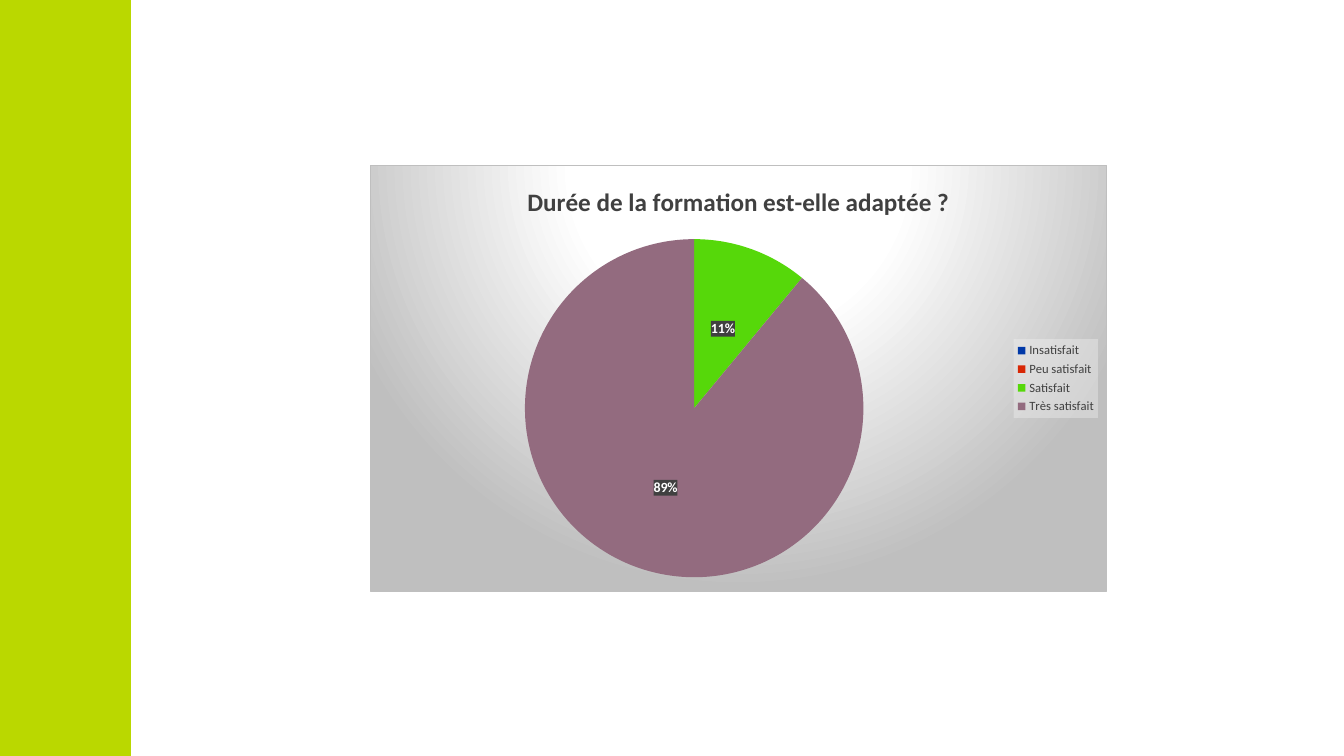
"""Build a survey slide: one pie chart on training length beside a green band."""
from pptx import Presentation
from pptx.chart.data import CategoryChartData
from pptx.dml.color import RGBColor
from pptx.enum.chart import XL_CHART_TYPE, XL_LABEL_POSITION, XL_LEGEND_POSITION
from pptx.enum.shapes import MSO_SHAPE
from pptx.oxml import parse_xml
from pptx.oxml.ns import nsdecls
from pptx.util import Pt

QUESTION = "Durée de la formation est-elle adaptée ?"
ANSWERS = [
    ("Insatisfait", 0, "0038A8"),
    ("Peu satisfait", 0, "D82705"),
    ("Satisfait", 11, "56D80A"),
    ("Très satisfait", 89, "936B7F"),
]
SLIDE = (960, 540)
BAND = (0, 0, 93.6, 540)
CHART = (264.24, 118.08, 526.32, 304.56)
PIE = {"x": 0.21, "y": 0.17, "w": 0.46, "h": 0.8}
THEME = {
    "font": "Calibri", "band": "BAD800", "text": "404040", "label": "FFFFFF",
    "light": "FFFFFF", "edge": "BFBFBF", "legend": "F2F2F2",
    "title_size": 18, "label_size": 10, "legend_size": 9,
}
NS = nsdecls("c", "a")


def style_font(font, size, color, bold=False):
    """Apply the theme typeface with a size, colour and weight."""
    font.name, font.size, font.bold = THEME["font"], Pt(size), bold
    font.color.rgb = RGBColor.from_string(color)


def sheer_fill(color, percent):
    """Return chart shape properties with a partly transparent fill."""
    return parse_xml(
        f'<c:spPr {NS}><a:solidFill><a:srgbClr val="{color}">'
        f'<a:alpha val="{percent * 1000}"/></a:srgbClr></a:solidFill></c:spPr>')


def chart_background():
    """Return the radial gradient and thin border of the chart area."""
    stops = [(0, THEME["light"]), (39, THEME["light"]), (100, THEME["edge"])]
    gs = "".join(f'<a:gs pos="{p * 1000}"><a:srgbClr val="{c}"/></a:gs>' for p, c in stops)
    return parse_xml(
        f'<c:spPr {NS}><a:gradFill><a:gsLst>{gs}</a:gsLst><a:path path="circle">'
        '<a:fillToRect l="50000" t="-80000" r="50000" b="180000"/></a:path></a:gradFill>'
        f'<a:ln w="{Pt(0.75)}"><a:solidFill><a:srgbClr val="{THEME["edge"]}"/>'
        '</a:solidFill></a:ln></c:spPr>')


def place_pie(plot_area):
    """Fix the pie's box as fractions of the chart area."""
    for old in plot_area.findall("{*}layout"):
        plot_area.remove(old)
    sizes = "".join(f'<c:{k} val="{v}"/>' for k, v in PIE.items())
    plot_area.insert(0, parse_xml(
        f'<c:layout {NS}><c:manualLayout><c:layoutTarget val="inner"/>'
        f'<c:xMode val="edge"/><c:yMode val="edge"/>{sizes}</c:manualLayout></c:layout>'))


def style_series(series):
    """Colour the slices and label those that are not empty."""
    labels = series.data_labels
    labels.show_value, labels.show_percentage = False, True
    labels.number_format, labels.number_format_is_linked = "0%", False
    labels.position = XL_LABEL_POSITION.CENTER
    style_font(labels.font, THEME["label_size"], THEME["label"], True)
    xml = labels._element
    xml.find("{*}txPr").addprevious(sheer_fill(THEME["text"], 75))
    hidden = [i for i, (_, value, _) in enumerate(ANSWERS) if not value]
    for position, i in enumerate(hidden):
        xml.insert(position, parse_xml(
            f'<c:dLbl {NS}><c:idx val="{i}"/><c:delete val="1"/></c:dLbl>'))
    for i, (_, _, color) in enumerate(ANSWERS):
        fill = series.points[i].format.fill
        fill.solid()
        fill.fore_color.rgb = RGBColor.from_string(color)


def add_band(s):
    """Draw the green band on the left edge."""
    sp = s.shapes.add_shape(MSO_SHAPE.RECTANGLE, *map(Pt, BAND))
    sp.shadow.inherit = False
    sp.fill.solid()
    sp.fill.fore_color.rgb = RGBColor.from_string(THEME["band"])
    sp.line.fill.background()


def add_pie(s):
    """Add the pie chart with its title and legend."""
    data = CategoryChartData()
    data.categories = [name for name, _, _ in ANSWERS]
    data.add_series(QUESTION, [value for _, value, _ in ANSWERS])
    chart = s.shapes.add_chart(XL_CHART_TYPE.PIE, *map(Pt, CHART), data).chart
    style_font(chart.font, THEME["label_size"], THEME["text"])
    chart.has_title = True
    p = chart.chart_title.text_frame.paragraphs[0]
    p.text = QUESTION
    style_font(p.font, THEME["title_size"], THEME["text"], True)
    chart.has_legend = True
    legend = chart.legend
    legend.position, legend.include_in_layout = XL_LEGEND_POSITION.RIGHT, False
    style_font(legend.font, THEME["legend_size"], THEME["text"])
    legend._element.find("{*}txPr").addprevious(sheer_fill(THEME["legend"], 39))
    plot = chart.plots[0]
    plot.vary_by_categories = True
    style_series(plot.series[0])
    body = chart.element.find("{*}chart")
    place_pie(body.find("{*}plotArea"))
    body.addnext(chart_background())


def main():
    """Create and save the presentation."""
    prs = Presentation()
    prs.slide_width, prs.slide_height = map(Pt, SLIDE)
    s = prs.slides.add_slide(prs.slide_layouts[6])
    add_band(s)
    add_pie(s)
    prs.save("out.pptx")


if __name__ == "__main__":
    main()
